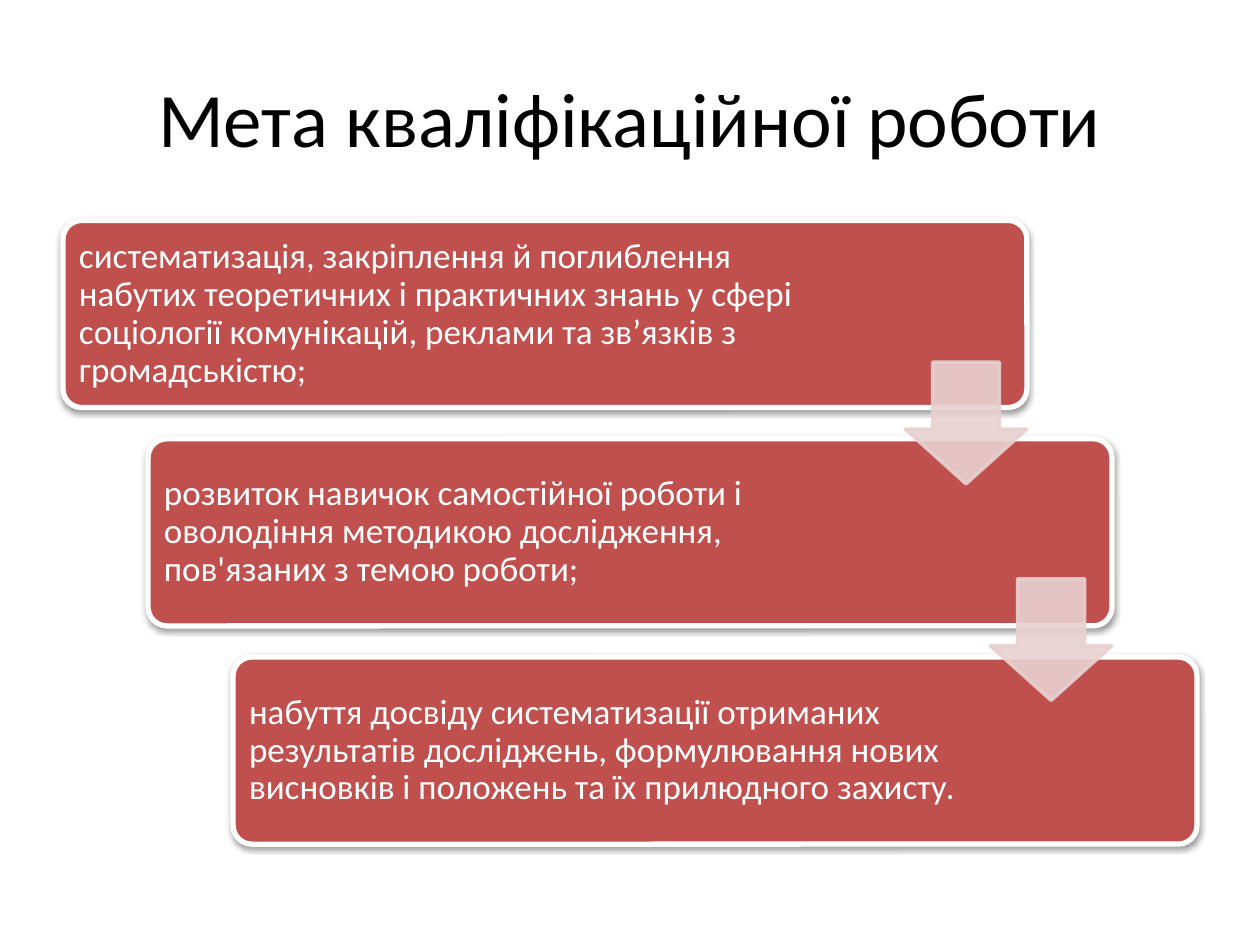
from lxml import etree
from pptx import Presentation
from pptx.dml.color import RGBColor
from pptx.enum import shapes, text
from pptx.oxml import ns
from pptx.util import Pt

COLORS = {"title": "000000", "step": "C0504D", "light": "FFFFFF",
          "arrow": "E8D0D0", "shadow": "000000"}
FONT = "Calibri"
GOALS = [
    ("систематизація, закріплення й поглиблення набутих теоретичних і "
     "практичних знань у сфері соціології комунікацій, реклами та зв’язків "
     "з громадськістю;", 435.6),
    ("розвиток навичок самостійної роботи і оволодіння методикою "
     "дослідження, пов'язаних з темою роботи;", 426),
    ("набуття досвіду систематизації отриманих результатів досліджень, "
     "формулювання нових висновків і положень та їх прилюдного захисту.", 426),
]


def color(name):
    return RGBColor.from_string(COLORS[name])


def style_text(frame, size, color_name):
    frame.word_wrap = True
    frame.vertical_anchor = text.MSO_ANCHOR.MIDDLE
    for paragraph in frame.paragraphs:
        for run in paragraph.runs:
            run.font.name = FONT
            run.font.size = Pt(size)
            run.font.color.rgb = color(color_name)


def paint(shape, fill, line, width):
    shape.fill.solid()
    shape.fill.fore_color.rgb = color(fill)
    shape.line.color.rgb = color(line)
    shape.line.width = Pt(width)
    shape.shadow.inherit = False


def set_alpha(srgb, percent):
    etree.SubElement(srgb, ns.qn("a:alpha"), val=str(percent * 1000))


def add_shadow(shape):
    """Give the shape a soft shadow straight below it."""
    effects = shape._element.spPr.find(ns.qn("a:effectLst"))
    outer = etree.SubElement(
        effects, ns.qn("a:outerShdw"), blurRad=str(Pt(3.1)),
        dist=str(Pt(1.6)), dir="5400000", rotWithShape="0")
    srgb = etree.SubElement(outer, ns.qn("a:srgbClr"), val=COLORS["shadow"])
    set_alpha(srgb, 38)


def add_title(slide, left, top, width, height):
    title = slide.shapes.title
    title.left, title.top = Pt(left), Pt(top)
    title.width, title.height = Pt(width), Pt(height)
    title.text_frame.text = "Мета кваліфікаційної роботи"
    title.text_frame.paragraphs[0].alignment = text.PP_ALIGN.CENTER
    style_text(title.text_frame, 44, "title")


def add_step(group, goal, text_width, left, top, width, height):
    card = group.shapes.add_shape(
        shapes.MSO_SHAPE.ROUNDED_RECTANGLE,
        Pt(left), Pt(top), Pt(width), Pt(height))
    card.adjustments[0] = 0.1
    paint(card, "step", "light", 3)
    add_shadow(card)

    inset = 3.13
    label = group.shapes.add_textbox(
        Pt(left + inset), Pt(top + inset),
        Pt(text_width), Pt(height - 2 * inset))
    frame = label.text_frame
    frame.margin_left = frame.margin_right = Pt(6)
    frame.margin_top = frame.margin_bottom = Pt(6)
    frame.text = goal
    frame.paragraphs[0].line_spacing = 0.9
    style_text(frame, 20, "light")


def add_arrow(group, left, top, size):
    arrow = group.shapes.add_shape(
        shapes.MSO_SHAPE.DOWN_ARROW, Pt(left), Pt(top), Pt(size), Pt(size))
    arrow.adjustments[0], arrow.adjustments[1] = 0.55, 0.45
    paint(arrow, "arrow", "arrow", 2)
    for srgb in arrow._element.spPr.iter(ns.qn("a:srgbClr")):
        set_alpha(srgb, 90)


def add_staircase(slide, left, top, width, height):
    """Place cards diagonally across the box, with arrows between them."""
    card_width, card_height = width * 0.85, height * 0.3
    last = len(GOALS) - 1
    step_x = (width - card_width) / last
    step_y = (height - card_height) / last
    arrow_size = card_height * 0.65
    group = slide.shapes.add_group_shape()
    for i, (goal, text_width) in enumerate(GOALS):
        add_step(group, goal, text_width, left + i * step_x, top + i * step_y,
                 card_width, card_height)
    for i in range(last):
        # The second arrow sits slightly higher against its card.
        add_arrow(group, left + card_width - arrow_size + i * step_x,
                  top + 81 + i * (step_y - 1), arrow_size)


def main():
    prs = Presentation()
    prs.slide_width, prs.slide_height = Pt(720), Pt(540)
    slide = prs.slides.add_slide(prs.slide_layouts[5])
    add_title(slide, 36, 21.6, 648, 90)
    add_staircase(slide, 36, 126, 648, 356.4)
    prs.save("out.pptx")


if __name__ == "__main__":
    main()
